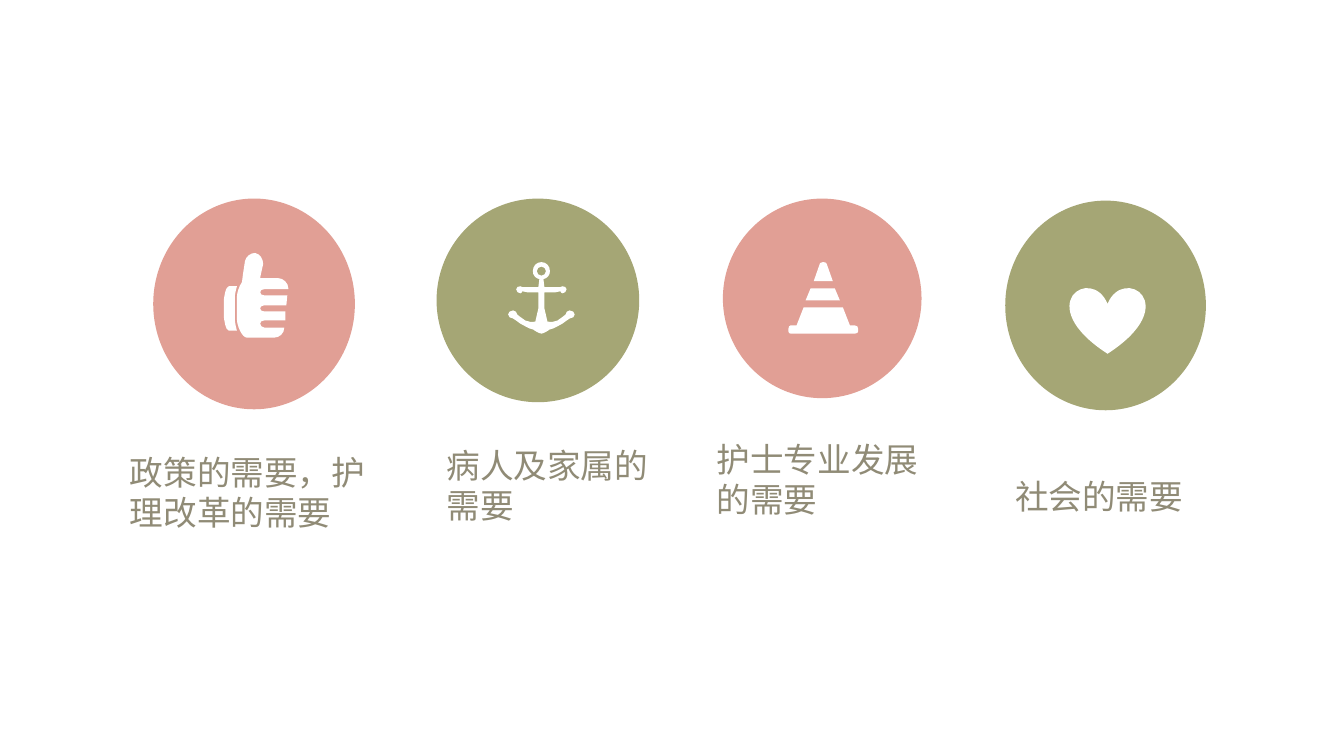
from lxml import etree
from pptx import Presentation
from pptx.dml.color import RGBColor
from pptx.enum.shapes import MSO_SHAPE
from pptx.enum.text import MSO_AUTO_SIZE
from pptx.oxml.ns import qn
from pptx.util import Inches, Pt

COLORS = {"pink": "E19F95", "olive": "A5A675", "icon": "FFFFFF", "text": "908B76"}
FONT = "Noto Sans CJK SC"


def paint(sp, color):
    sp.shadow.inherit = False
    sp.fill.solid()
    sp.fill.fore_color.rgb = RGBColor.from_string(COLORS[color])
    sp.line.fill.background()


def add_outline(shapes, contours):
    """Draw contours of points (x, y) and curves (x1, y1, x2, y2, x, y)."""
    contours = [[[Inches(v / 100) for v in seg] for seg in contour] for contour in contours]
    builder = shapes.build_freeform(*contours[0][0])
    for i, contour in enumerate(contours):
        if i > 0:
            builder.move_to(*contour[0])
        builder.add_line_segments([seg[-2:] for seg in contour[1:]], close=True)
    sp = builder.convert_to_shape()

    # Bend the straight segments that have control points
    segments = [seg for contour in contours for seg in contour[1:]]
    for line, seg in zip(list(sp._element.iter(qn("a:lnTo"))), segments):
        if len(seg) == 6:
            line.tag = qn("a:cubicBezTo")
            line.remove(line[0])
            for x, y in zip(seg[::2], seg[1::2]):
                etree.SubElement(line, qn("a:pt"), x=str(x - sp.left), y=str(y - sp.top))
    paint(sp, "icon")


# Icon outlines, in hundredths of an inch on the slide
cuff = [(233, 294), (233, 292, 234, 288, 235, 284), (227, 284),
        (224, 284, 222, 295, 222, 299), (222, 313),
        (222, 317, 224, 328, 227, 328), (235, 328),
        (234, 324, 233, 320, 233, 317)]

hand = [(240, 280), (237, 284, 235, 291, 235, 294), (235, 317),
        (235, 323, 240, 335, 245, 335), (272, 335),
        (277, 335, 282, 331, 282, 325)]
# Gaps between the fingers: bottom, middle, top, right end below and above
for bottom, mid, top, below, above in [(325, 321, 318, 282, 283),
                                       (309, 306, 303, 283, 284),
                                       (293, 290, 287, 285, 286)]:
    hand += [(below, bottom), (262, bottom), (260, bottom, 258, mid + 2, 258, mid),
             (258, mid - 2, 260, top, 262, top), (above, top)]
hand += [(286, 286), (286, 281, 281, 276, 276, 276), (258, 276), (259, 271),
         (261, 262), (261, 257, 258, 252, 253, 251),
         (249, 251, 244, 254, 243, 259), (241, 272)]

# The anchor is given as right halves, mirrored about its axis
ANCHOR_AXIS = 537
anchor_half = [(537, 260), (542, 260, 545.5, 264, 545.5, 269),
               (545.5, 273, 543, 276, 539, 277), (539, 279, 540, 282, 540, 285),
               (555, 285), (556, 284, 557, 284, 558, 284),
               (560, 284, 562, 285, 562, 287), (562, 289, 560, 291, 558, 291),
               (557, 291, 556, 290, 556, 289), (551, 290), (540, 290),
               (540, 306), (543, 319), (547, 320, 550, 319, 553, 318),
               (557, 315, 559, 314, 561, 312), (561, 310, 563, 308, 565, 308),
               (568, 308, 570, 310, 570, 312), (570, 314, 568, 316, 565, 316),
               (563, 317, 561, 319, 558, 321), (554, 323, 550, 326, 545, 327),
               (544, 328, 539, 331, 537, 331)]
ring_half = [(537, 264.5), (539.5, 264.5, 541.5, 266.5, 541.5, 269),
             (541.5, 271.5, 539.5, 273.5, 537, 273.5)]
anchor = []
for half in (anchor_half, ring_half):
    contour = list(half)
    for before, seg in zip(half[-2::-1], half[:0:-1]):
        back = before[-2:]
        if len(seg) == 6:
            back = seg[2:4] + seg[:2] + back
        contour.append(tuple(v if i % 2 else 2 * ANCHOR_AXIS - v for i, v in enumerate(back)))
    anchor.append(contour)

cone_base = [(790, 323), (784, 323), (783, 323, 782, 324, 782, 326), (782, 329),
             (782, 330, 783, 331, 784, 331), (848, 331),
             (850, 331, 851, 330, 851, 329), (851, 326),
             (851, 324, 850, 323, 848, 323), (843, 323), (836, 305), (797, 305)]
cone_tip = [(820, 262), (820, 262, 820, 260, 816, 260),
            (813, 260, 813, 262, 813, 262), (807, 279), (826, 279)]
cone_band = [(804, 286), (799, 298), (833, 298), (828, 286)]

# Each icon is a list of shapes, each shape a list of contours
thumb_icon = [[cuff], [hand]]
anchor_icon = [anchor]
cone_icon = [[cone_base], [cone_tip], [cone_band]]

# Circle box, circle colour, label box, label, icon
needs = [
    ((1.52, 1.97, 2, 2.09), "pink", (1.19, 4.43, 2.83, 0.91), "政策的需要，护理改革的需要", thumb_icon),
    ((4.33, 1.97, 2.01, 2.02), "olive", (4.33, 4.36, 2.37, 0.91), "病人及家属的需要", anchor_icon),
    ((7.17, 1.97, 1.97, 1.98), "pink", (7.01, 4.3, 2.31, 0.91), "护士专业发展的需要", cone_icon),
    ((9.97, 1.99, 1.99, 2.08), "olive", (9.97, 4.67, 2.35, 0.5), "社会的需要", []),
]

prs = Presentation()
prs.slide_width, prs.slide_height = Inches(13.33), Inches(7.5)
s = prs.slides.add_slide(prs.slide_layouts[6])

for circle_box, color, label_box, label, icon in needs:
    shapes = s.shapes.add_group_shape().shapes

    # Circle
    sp = shapes.add_shape(MSO_SHAPE.OVAL, *map(Inches, circle_box))
    paint(sp, color)

    # Label
    tb = shapes.add_textbox(*map(Inches, label_box))
    tf = tb.text_frame
    tf.word_wrap = True
    tf.auto_size = MSO_AUTO_SIZE.SHAPE_TO_FIT_TEXT
    tf.text = label
    r = tf.paragraphs[0].runs[0]
    r.font.size = Pt(24)
    r.font.name = FONT
    r.font.color.rgb = RGBColor.from_string(COLORS["text"])
    etree.SubElement(r.font._element, qn("a:ea"), typeface=FONT)

    # Icon
    for contours in icon:
        add_outline(shapes, contours)

# Heart icon, in the last group
heart = shapes.add_shape(MSO_SHAPE.HEART, Inches(10.61), Inches(2.85), Inches(0.75), Inches(0.66))
paint(heart, "icon")

prs.save("out.pptx")
